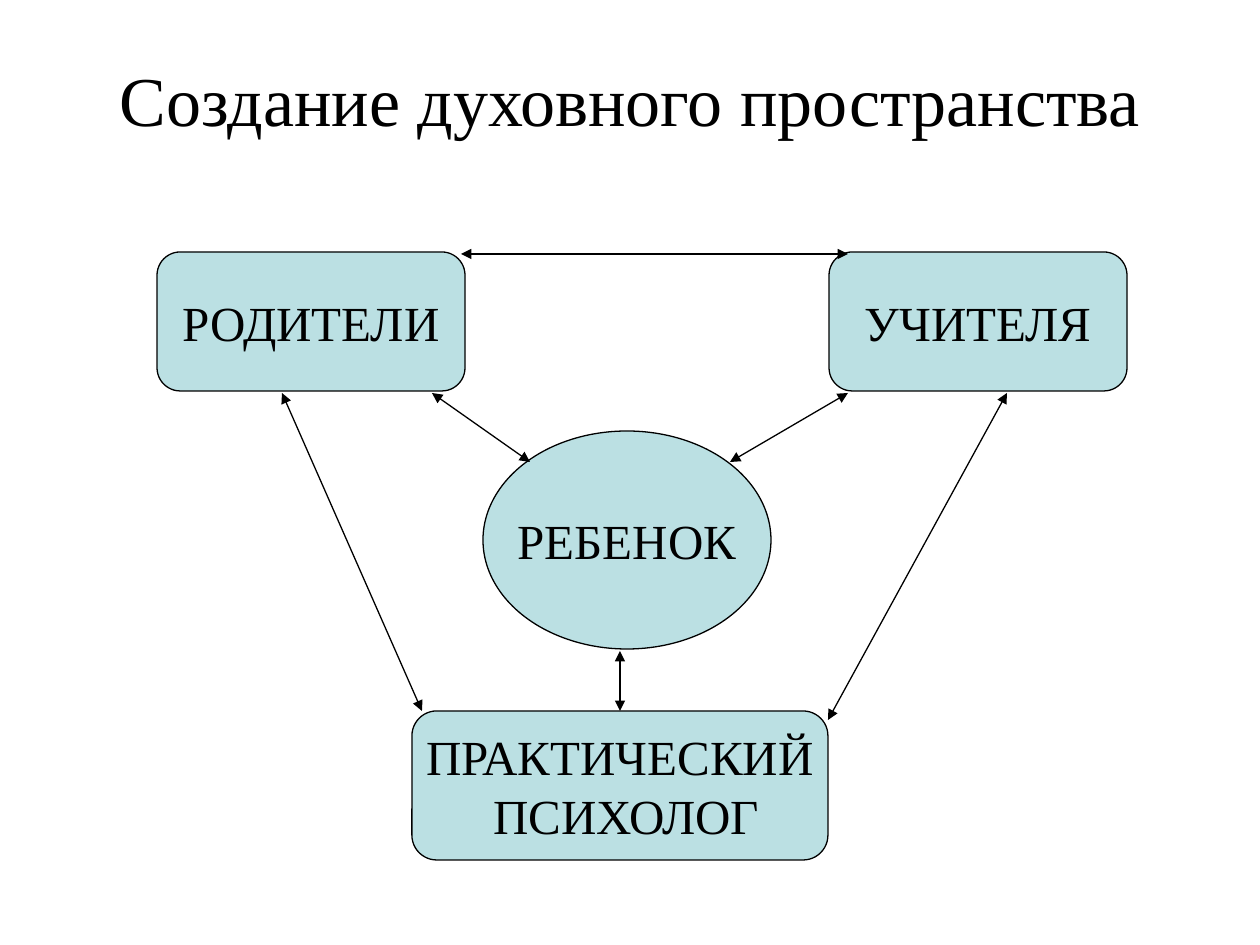
from lxml.etree import SubElement
from pptx import Presentation
from pptx.dml.color import RGBColor
from pptx.enum.shapes import MSO_CONNECTOR, MSO_SHAPE
from pptx.enum.text import MSO_ANCHOR, PP_ALIGN
from pptx.oxml.ns import qn
from pptx.util import Pt

BLACK = RGBColor(0x00, 0x00, 0x00)
PALE_TEAL = RGBColor(0xBB, 0xE0, 0xE3)
FONT = "Times New Roman"
BOX = MSO_SHAPE.FLOWCHART_ALTERNATE_PROCESS

TITLE = "Создание духовного пространства"
TITLE_PLACE = (63, 35, 1134, 127)
ROLES = {
    "parents": (BOX, (157, 252, 308, 139), ["РОДИТЕЛИ"]),
    "teachers": (BOX, (829, 252, 298, 139), ["УЧИТЕЛЯ"]),
    "psychologist": (BOX, (412, 711, 416, 149), ["ПРАКТИЧЕСКИЙ", " ПСИХОЛОГ"]),
    "child": (MSO_SHAPE.OVAL, (483, 431, 288, 218), ["РЕБЕНОК"]),
}
ARROWS = [
    ((432, 393), (530, 462), None),
    ((730, 462), (848, 393), None),
    ((620, 651), (620, 711), "psychologist"),
    ((828, 720), (1007, 393), None),
    ((848, 254), (461, 254), None),
    ((282, 393), (422, 711), None),
]


def px(*values):
    return [round(value * 914400 / 126) for value in values]


def write(shape, lines, size, wrap):
    frame = shape.text_frame
    frame.word_wrap = wrap
    frame.vertical_anchor = MSO_ANCHOR.MIDDLE
    for index, line in enumerate(lines):
        paragraph = frame.add_paragraph() if index else frame.paragraphs[0]
        paragraph.alignment = PP_ALIGN.CENTER
        run = paragraph.add_run()
        run.text = line
        run.font.name = FONT
        run.font.size = Pt(size)
        run.font.color.rgb = BLACK


def outline(item):
    item.line.color.rgb = BLACK
    item.line.width = Pt(0.75)


def add_role(slide, kind, place, lines):
    shape = slide.shapes.add_shape(kind, *px(*place))
    shape.shadow.inherit = False
    shape.fill.solid()
    shape.fill.fore_color.rgb = PALE_TEAL
    outline(shape)
    write(shape, lines, 28, False)
    return shape


def add_arrow(slide, start, end, target):
    connector = slide.shapes.add_connector(MSO_CONNECTOR.STRAIGHT, *px(*start, *end))
    if target is not None:
        connector.end_connect(target, 0)
    outline(connector)
    line = connector.line._get_or_add_ln()
    for tag in ("a:headEnd", "a:tailEnd"):
        SubElement(line, qn(tag), type="triangle")
    SubElement(connector._element.spPr, qn("a:effectLst"))


def main():
    presentation = Presentation()
    presentation.slide_width, presentation.slide_height = px(1260, 945)
    slide = presentation.slides.add_slide(presentation.slide_layouts[6])
    write(slide.shapes.add_textbox(*px(*TITLE_PLACE)), [TITLE], 40, True)
    roles = {name: add_role(slide, *role) for name, role in ROLES.items()}
    for start, end, target in ARROWS:
        add_arrow(slide, start, end, roles.get(target))
    presentation.save("out.pptx")


if __name__ == "__main__":
    main()
